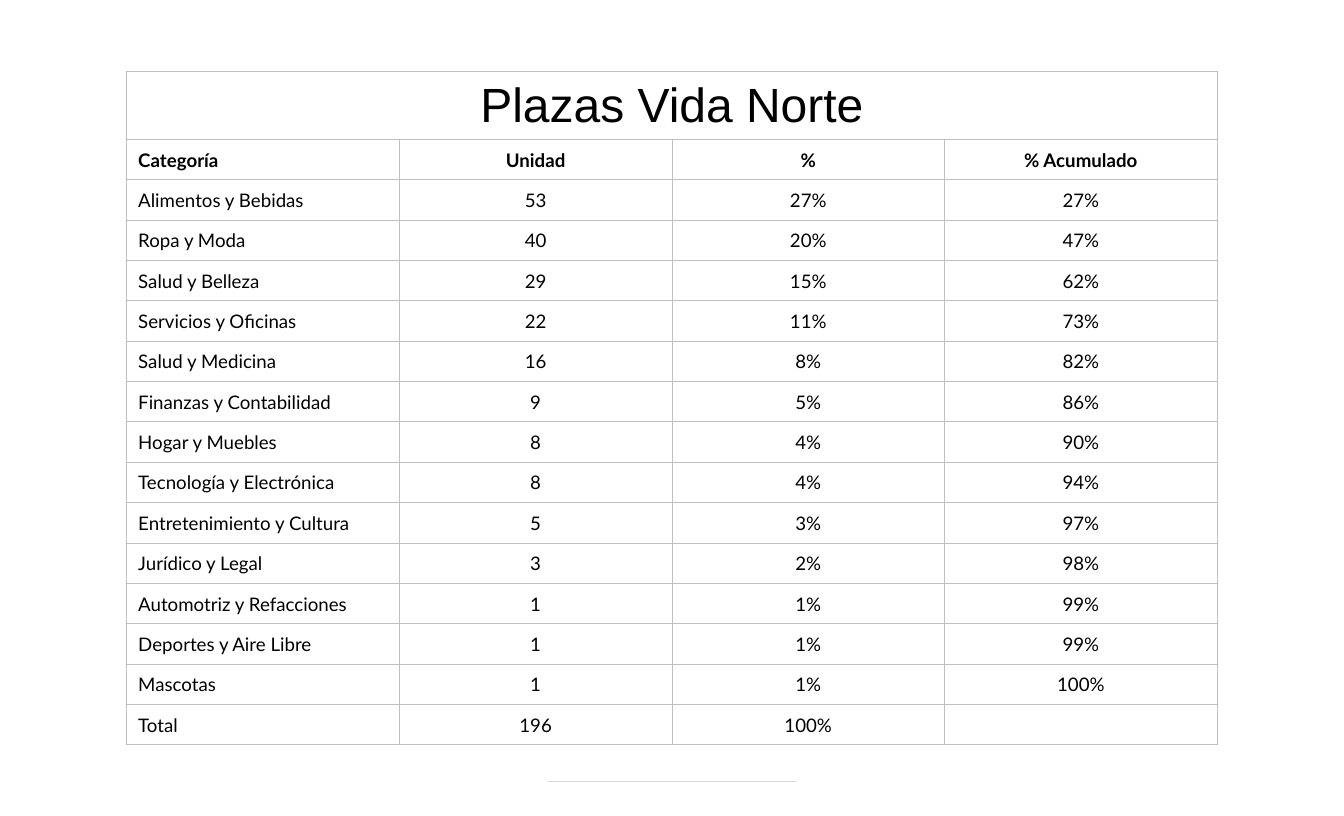
from lxml.etree import SubElement
from pptx import Presentation
from pptx.dml.color import RGBColor
from pptx.enum.shapes import MSO_CONNECTOR as Connector
from pptx.enum.text import MSO_ANCHOR as Anchor, PP_ALIGN as Align
from pptx.oxml import parse_xml
from pptx.oxml.ns import nsdecls, qn
from pptx.util import Inches, Pt

BLACK = RGBColor(0x00, 0x00, 0x00)
GRID = RGBColor(0xBF, 0xBF, 0xBF)
RULE = RGBColor(0xD9, 0xD9, 0xD9)
WIDTH, HEIGHT = 14, 8.5
TITLE = "Plazas Vida Norte"
TITLE_ROW = 0.71
HEADERS = ("Categoría", "Unidad", "%", "% Acumulado")
RECORDS = (
    ("Alimentos y Bebidas", "53", "27%", "27%"),
    ("Ropa y Moda", "40", "20%", "47%"),
    ("Salud y Belleza", "29", "15%", "62%"),
    ("Servicios y Oficinas", "22", "11%", "73%"),
    ("Salud y Medicina", "16", "8%", "82%"),
    ("Finanzas y Contabilidad", "9", "5%", "86%"),
    ("Hogar y Muebles", "8", "4%", "90%"),
    ("Tecnología y Electrónica", "8", "4%", "94%"),
    ("Entretenimiento y Cultura", "5", "3%", "97%"),
    ("Jurídico y Legal", "3", "2%", "98%"),
    ("Automotriz y Refacciones", "1", "1%", "99%"),
    ("Deportes y Aire Libre", "1", "1%", "99%"),
    ("Mascotas", "1", "1%", "100%"),
    ("Total", "196", "100%", ""),
)


def style_cell(cell, indent):
    cell.fill.background()
    cell.vertical_anchor = Anchor.MIDDLE
    cell.margin_left = Inches(indent)
    cell.margin_right = cell.margin_top = Inches(0.01)
    cell.margin_bottom = 0
    properties = cell._tc.get_or_add_tcPr()
    for position, side in enumerate("LRTB"):
        border = parse_xml(
            f'<a:ln{side} {nsdecls("a")} w="{Pt(0.5)}"><a:solidFill>'
            f'<a:srgbClr val="{GRID}"/></a:solidFill></a:ln{side}>')
        properties.insert(position, border)


def write_cell(cell, text, align, font="Lato", size=14, bold=False):
    para = cell.text_frame.paragraphs[0]
    para.alignment = align
    if text:
        span = para.add_run()
        span.text = text
        span.font.name = font
        span.font.size = Pt(size)
        span.font.bold = bold
        span.font.color.rgb = BLACK


def add_category_table(page, left, top, width, height):
    lines = (HEADERS, *RECORDS)
    frame = page.shapes.add_table(len(lines) + 1, len(HEADERS), Inches(left),
                                  Inches(top), Inches(width), Inches(height))
    table = frame.table
    table.first_row = table.horz_banding = False
    for column in table.columns:
        column.width = Inches(width / len(HEADERS))
    for row in table.rows:
        row.height = Inches((height - TITLE_ROW) / len(lines))
    table.rows[0].height = Inches(TITLE_ROW)

    table.cell(0, 0).merge(table.cell(0, len(HEADERS) - 1))
    for column in range(len(HEADERS)):
        style_cell(table.cell(0, column), 0.01)
    write_cell(table.cell(0, 0), TITLE, Align.CENTER, "Arial", 36)

    for row, line in enumerate(lines, start=1):
        for column, text in enumerate(line):
            cell = table.cell(row, column)
            style_cell(cell, 0.01 if column else 0.12)
            write_cell(cell, text, Align.CENTER if column else Align.LEFT,
                       bold=line is HEADERS)


def add_footer_rule(page, left, top, width):
    rule = page.shapes.add_connector(Connector.STRAIGHT, Inches(left), Inches(top),
                                     Inches(left + width), Inches(top))
    rule.line.color.rgb = RULE
    rule.line.width = Pt(0.5)
    SubElement(rule._element.spPr, qn("a:effectLst"))


def main():
    deck = Presentation()
    deck.slide_width, deck.slide_height = Inches(WIDTH), Inches(HEIGHT)
    page = deck.slides.add_slide(deck.slide_layouts[6])
    rule_width, table_width = 2.58, 11.36
    add_footer_rule(page, (WIDTH - rule_width) / 2, 8.14, rule_width)
    add_category_table(page, (WIDTH - table_width) / 2, 0.74, table_width, 7.02)
    deck.save("out.pptx")


if __name__ == "__main__":
    main()
